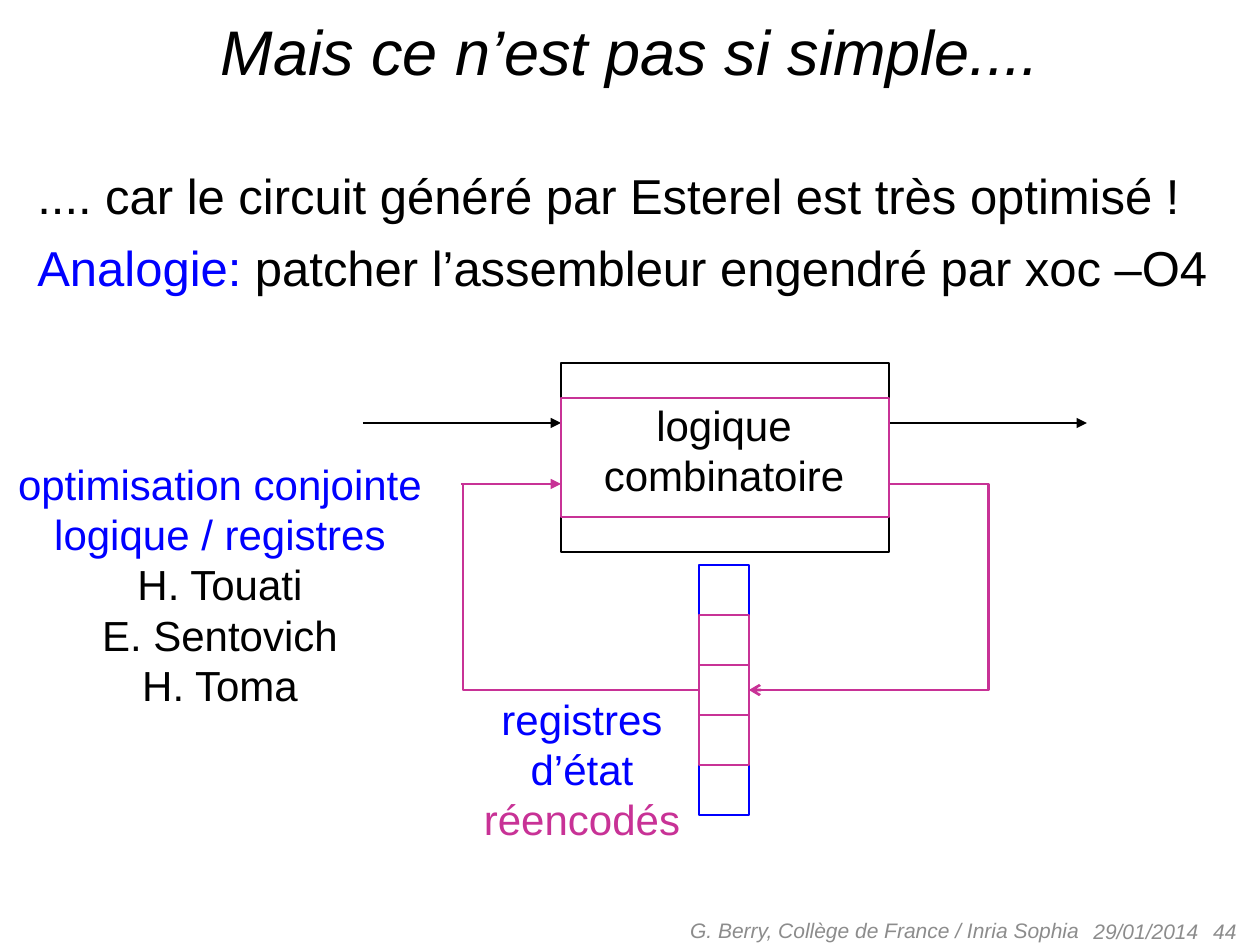
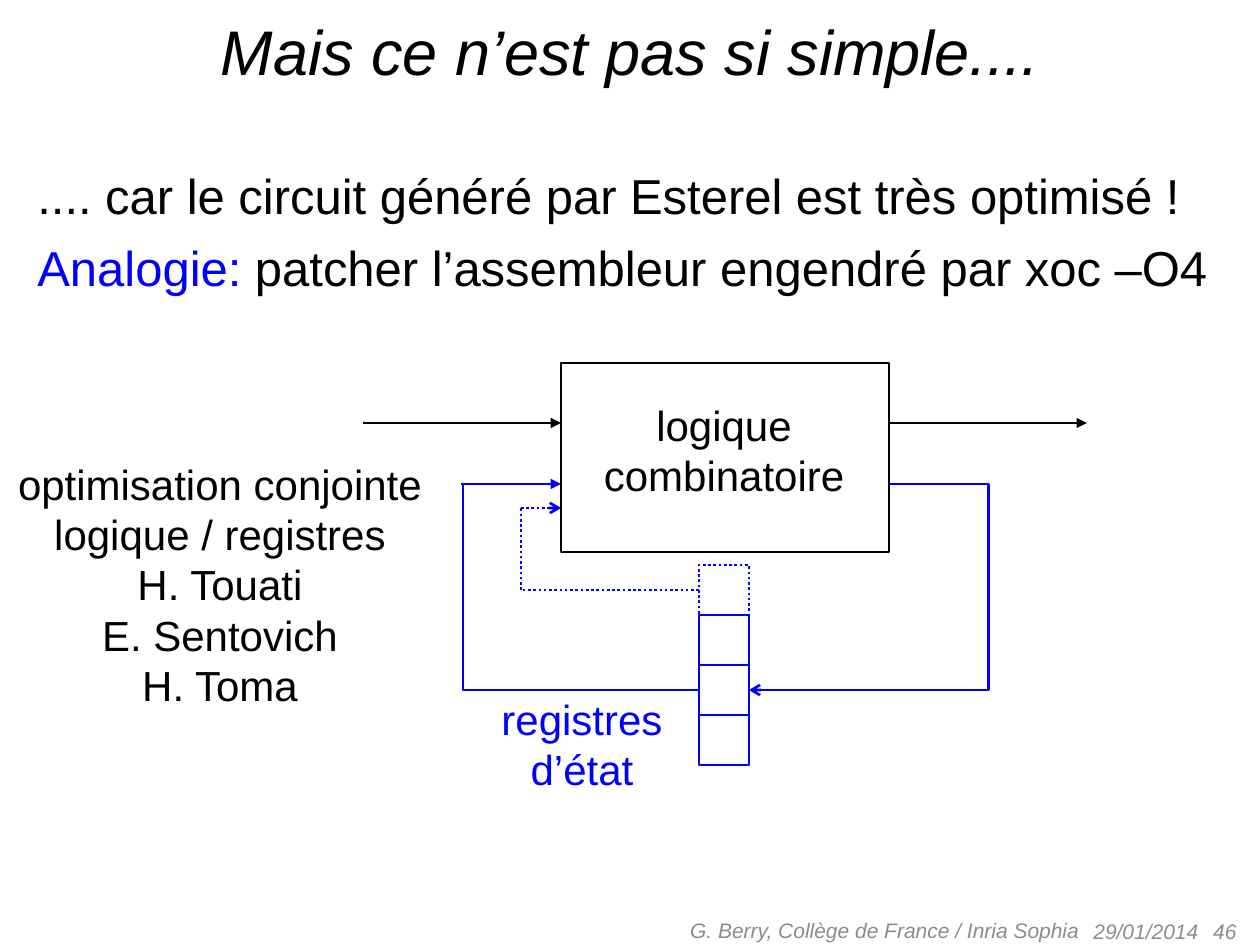
from lxml.etree import SubElement
from pptx import Presentation
from pptx.dml.color import RGBColor
from pptx.enum.dml import MSO_LINE
from pptx.enum.shapes import MSO_CONNECTOR, MSO_SHAPE
from pptx.enum.text import MSO_ANCHOR, MSO_AUTO_SIZE, PP_ALIGN
from pptx.oxml.ns import qn
from pptx.util import Emu, Pt

FONT = "Arial"
COLORS = {"black": "000000", "blue": "0000FF", "pink": "C83296", "gray": "8C8C8C"}
LINE_WIDTH = 1.5

# Paragraphs are lists of (text, colour) runs.
TITLE = "Mais ce n’est pas si simple...."
INTRO = [
    [(".... car le circuit généré par Esterel est très optimisé !", "black")],
    [("Analogie: ", "blue"), ("patcher l’assembleur engendré par xoc –O4", "black")],
]
LOGIC = ["logique", "combinatoire"]
TOPIC = ["optimisation conjointe", "logique / registres"]
AUTHORS = ["H. Touati", "E. Sentovich", "H. Toma"]
REGISTERS = ["registres", "d’état"]
AUTHOR_LINE = "G. Berry, Collège de France / Inria Sophia"
DATE = "29/01/2014"

SLIDES = [
    {
        "number": "44",
        "topic_color": "blue",
        "feedback_color": "pink",
        "cells": [(0, "blue"), (4, "blue"), (1, "pink"), (2, "pink"), (3, "pink")],
        "extra_label": [[("réencodés", "pink")]],
        "reencoded": True,
    },
    {
        "number": "46",
        "topic_color": "black",
        "feedback_color": "blue",
        "cells": [(1, "blue"), (2, "blue"), (3, "blue")],
        "extra_label": [],
        "reencoded": False,
    },
]

# Circuit geometry in px.
BOX_LEFT, BOX_TOP, BOX_WIDTH, BOX_HEIGHT = 561, 363, 328, 189
BOX_RIGHT = BOX_LEFT + BOX_WIDTH
CELL_LEFT, CELL_TOP, CELL = 699, 565, 50
CELL_RIGHT = CELL_LEFT + CELL
INPUT_Y, FEEDBACK_Y, REGISTER_Y = 423, 484, CELL_TOP + 5 * CELL // 2
WIRE = 198
FEEDBACK_LEFT, FEEDBACK_RIGHT = 465, 987
BEND = 2
SPARE_X, SPARE_Y = 521, 508


def px(value):
    return Emu(round(value * 914400 / 126))


def color(name):
    return RGBColor.from_string(COLORS[name])


def lines(texts, color_name):
    return [[(text, color_name)] for text in texts]


def write(shape, paragraphs, size, align=PP_ALIGN.CENTER, italic=False,
          anchor=MSO_ANCHOR.TOP, spacing=None, before=None):
    frame = shape.text_frame
    frame.word_wrap = True
    frame.auto_size = MSO_AUTO_SIZE.NONE
    frame.vertical_anchor = anchor
    for index, runs in enumerate(paragraphs):
        paragraph = frame.add_paragraph() if index else frame.paragraphs[0]
        paragraph.alignment = align
        if spacing:
            paragraph.line_spacing = spacing
        if before:
            paragraph.space_before = Pt(before)
        for text, color_name in runs:
            run = paragraph.add_run()
            run.text = text
            run.font.name = FONT
            run.font.size = Pt(size)
            run.font.italic = italic
            run.font.color.rgb = color(color_name)


def add_text(slide, place, paragraphs, size=24, **text_format):
    write(slide.shapes.add_textbox(*map(px, place)), paragraphs, size, **text_format)


def style_line(line, color_name, dotted):
    line.color.rgb = color(color_name)
    line.width = Pt(LINE_WIDTH)
    if dotted:
        line.dash_style = MSO_LINE.ROUND_DOT


def add_box(slide, place, color_name, dotted=False):
    shape = slide.shapes.add_shape(MSO_SHAPE.RECTANGLE, *map(px, place))
    shape.shadow.inherit = False
    shape.fill.background()
    style_line(shape.line, color_name, dotted)


def add_wire(slide, start, end, color_name, head=None, bend=None, dotted=False):
    """Join two points; bend is the horizontal offset of the elbow from start."""
    kind = MSO_CONNECTOR.STRAIGHT if bend is None else MSO_CONNECTOR.ELBOW
    wire = slide.shapes.add_connector(kind, *map(px, start + end))
    style_line(wire.line, color_name, dotted)
    properties = wire._element.spPr
    if bend is not None:
        guides = properties.find(qn("a:prstGeom")).get_or_add_avLst()
        ratio = round(100000 * bend / (end[0] - start[0]))
        SubElement(guides, qn("a:gd"), name="adj1", fmla=f"val {ratio}")
    if head:
        SubElement(properties.find(qn("a:ln")), qn("a:tailEnd"), type=head)
    SubElement(properties, qn("a:effectLst"))


def add_frame(slide, number):
    """Title, introduction and footer."""
    title = slide.shapes.title
    title.left, title.top, title.width, title.height = map(px, (32, 6, 1197, 90))
    write(title, [[(TITLE, "black")]], 36, italic=True)
    add_text(slide, (25, 156, 1211, 147), INTRO, 28, align=PP_ALIGN.LEFT,
             spacing=1.05, before=6)
    for text, place, align in [
        (AUTHOR_LINE, (640, 905, 452, 50), PP_ALIGN.RIGHT),
        (DATE, (1081, 906, 150, 50), PP_ALIGN.LEFT),
        (number, (1200, 906, 49, 50), PP_ALIGN.RIGHT),
    ]:
        add_text(slide, place, lines([text], "gray"), 12, align=align, italic=True,
                 anchor=MSO_ANCHOR.MIDDLE)


def add_feedback(slide, color_name):
    add_wire(slide, (BOX_RIGHT, FEEDBACK_Y), (FEEDBACK_RIGHT, FEEDBACK_Y), color_name)
    add_wire(slide, (FEEDBACK_RIGHT, FEEDBACK_Y), (CELL_RIGHT, REGISTER_Y), color_name,
             head="arrow", bend=BEND)
    add_wire(slide, (FEEDBACK_LEFT, FEEDBACK_Y), (CELL_LEFT, REGISTER_Y), color_name,
             bend=-BEND)
    add_wire(slide, (FEEDBACK_LEFT - 2 * BEND, FEEDBACK_Y), (BOX_LEFT, FEEDBACK_Y),
             color_name, head="triangle")


def add_cell(slide, row, color_name, dotted=False):
    add_box(slide, (CELL_LEFT, CELL_TOP + row * CELL, CELL, CELL), color_name, dotted)


def add_spare_register(slide):
    add_cell(slide, 0, "blue", dotted=True)
    middle = CELL_TOP + CELL // 2
    corners = [(CELL_LEFT, middle), (SPARE_X, middle), (SPARE_X, SPARE_Y),
               (BOX_LEFT, SPARE_Y)]
    for start, end, head in zip(corners, corners[1:], (None, None, "arrow")):
        add_wire(slide, start, end, "blue", head=head, dotted=True)


def add_circuit(slide, content):
    add_box(slide, (BOX_LEFT, BOX_TOP, BOX_WIDTH, BOX_HEIGHT), "black")
    add_text(slide, (590, 393, 268, 115), lines(LOGIC, "black"))
    for left in (BOX_LEFT - WIRE, BOX_RIGHT):
        add_wire(slide, (left, INPUT_Y), (left + WIRE, INPUT_Y), "black", head="triangle")
    if content["reencoded"]:
        add_box(slide, (BOX_LEFT, 398, BOX_WIDTH, 119), "pink")
    else:
        add_spare_register(slide)
    add_feedback(slide, content["feedback_color"])
    for row, color_name in content["cells"]:
        add_cell(slide, row, color_name)
    add_text(slide, (0, 452, 440, 267),
             lines(TOPIC, content["topic_color"]) + lines(AUTHORS, "black"))
    add_text(slide, (470, 687, 224, 165), lines(REGISTERS, "blue") + content["extra_label"])


def main():
    presentation = Presentation()
    presentation.slide_width, presentation.slide_height = px(1260), px(945)
    for content in SLIDES:
        slide = presentation.slides.add_slide(presentation.slide_layouts[5])
        add_frame(slide, content["number"])
        add_circuit(slide, content)
    presentation.save("out.pptx")


if __name__ == "__main__":
    main()
